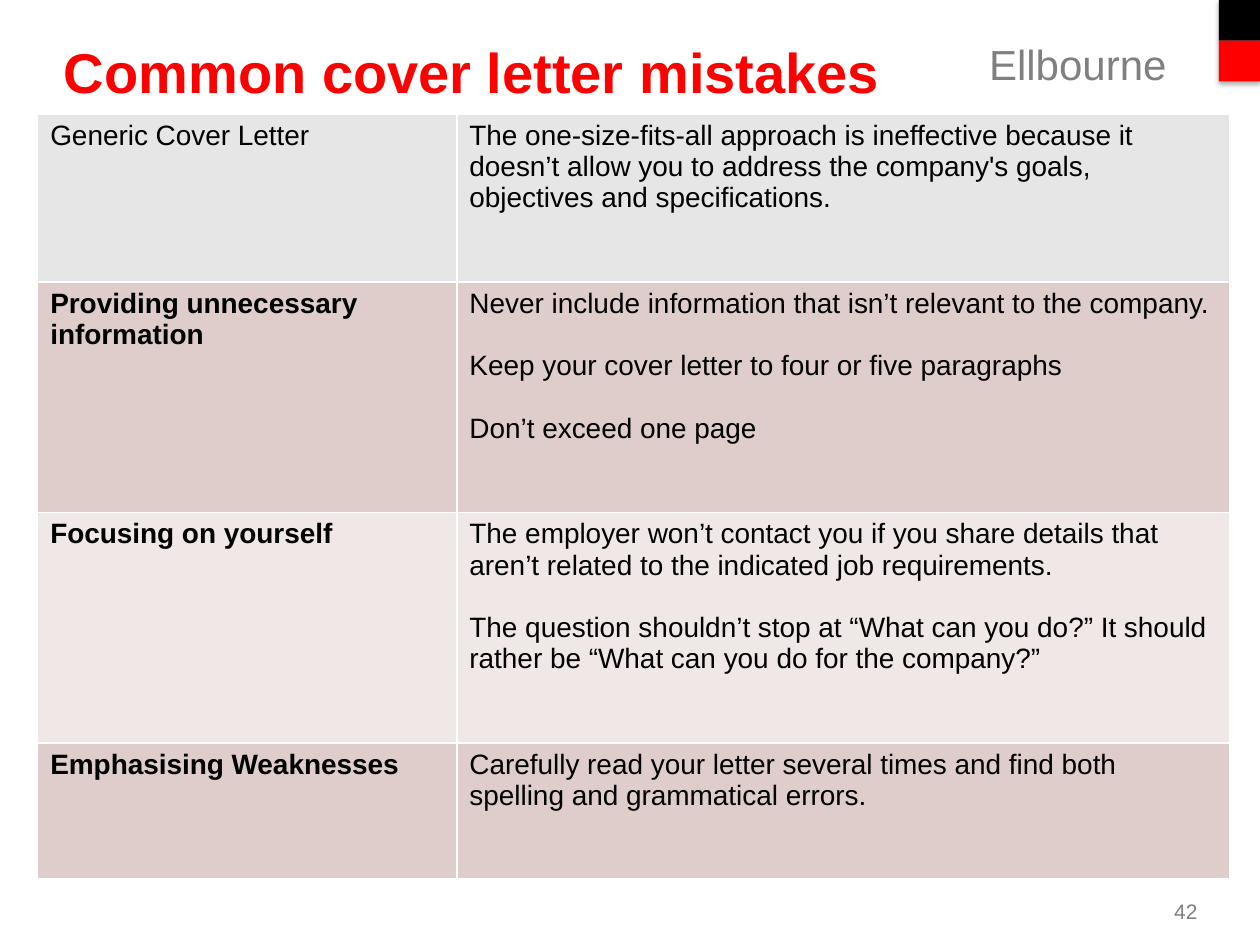
"""Build the slide on common cover letter mistakes."""
from lxml import etree
from pptx import Presentation
from pptx import util as u
from pptx.dml import color
from pptx.enum import shapes, text
from pptx.oxml import ns


def paint(target, value):
    target.solid()
    target.fore_color.rgb = color.RGBColor.from_string(value)


def style(para, size, value, bold=False):
    for span in para.runs:
        span.font.name = "Arial"
        span.font.size = u.Pt(size)
        span.font.bold = bold
        paint(span.font.fill, value)


deck = Presentation()
deck.slide_width, deck.slide_height = u.Cm(25.4), u.Cm(19.05)
page = deck.slides.add_slide(deck.slide_layouts[6])

for order, value in enumerate(["000000", "FF0000"]):
    square = page.shapes.add_shape(
        shapes.MSO_SHAPE.RECTANGLE, u.Cm(24.57), u.Cm(0.82 * order), u.Cm(0.83), u.Cm(0.82))
    paint(square.fill, value)
    square.line.fill.background()
    square.shadow.inherit = False
    effects = square._element.spPr.find(ns.qn("a:effectLst"))
    shadow = etree.SubElement(
        effects, ns.qn("a:outerShdw"), blurRad=str(u.Pt(3.1)), dist=str(u.Pt(1.8)),
        dir="5400000", rotWithShape="0")
    black = etree.SubElement(shadow, ns.qn("a:srgbClr"), val="000000")
    etree.SubElement(black, ns.qn("a:alpha"), val="35000")

left, right = text.PP_ALIGN.LEFT, text.PP_ALIGN.RIGHT
top, middle = text.MSO_ANCHOR.TOP, text.MSO_ANCHOR.MIDDLE
labels = [
    ("Ellbourne", 19.69, 0.64, 4.67, 1.3, 24, "808080", False, left, middle),
    ("Common cover letter mistakes", 1.04, 0.79, 17.73, 1.3, 32, "FF0000", True, left, middle),
    ("42", 18.47, 17.98, 5.92, 1.02, 12, "808080", False, right, top),
]
for words, x, y, width, height, size, value, bold, align, anchor in labels:
    box = page.shapes.add_textbox(u.Cm(x), u.Cm(y), u.Cm(width), u.Cm(height))
    box.text_frame.word_wrap = True
    box.text_frame.vertical_anchor = anchor
    box.text_frame.text = words
    para = box.text_frame.paragraphs[0]
    para.alignment = align
    style(para, size, value, bold)

mistakes = [
    ("Generic Cover Letter",
     ["The one-size-fits-all approach is ineffective because it doesn’t allow you to "
      "address the company's goals, objectives and specifications."],
     3.38, "E6E6E6"),
    ("Providing unnecessary information",
     ["Never include information that isn’t relevant to the company.",
      "Keep your cover letter to four or five paragraphs",
      "Don’t exceed one page"],
     4.65, "DFCDCC"),
    ("Focusing on yourself",
     ["The employer won’t contact you if you share details that aren’t related to the "
      "indicated job requirements.",
      "The question shouldn’t stop at “What can you do?” It should rather be “What can "
      "you do for the company?”"],
     4.65, "F0E8E7"),
    ("Emphasising Weaknesses",
     ["Carefully read your letter several times and find both spelling and grammatical errors."],
     2.74, "DFCDCC"),
]
table = page.shapes.add_table(
    len(mistakes), 2, u.Cm(0.76), u.Cm(2.3), u.Cm(24.04), u.Cm(15.42)).table
table.columns[0].width, table.columns[1].width = u.Cm(8.45), u.Cm(15.59)

for row, (mistake, advice, height, shade) in enumerate(mistakes):
    table.rows[row].height = u.Cm(height)
    for column, lines in enumerate([[mistake], advice]):
        cell = table.cell(row, column)
        paint(cell.fill, shade)
        cell.text_frame.text = "\n".join(lines)
        for order, para in enumerate(cell.text_frame.paragraphs):
            para.space_before = u.Pt(18 if order else 0)
            style(para, 16, "000000", bold=column == 0 and row > 0)

deck.save("out.pptx")
